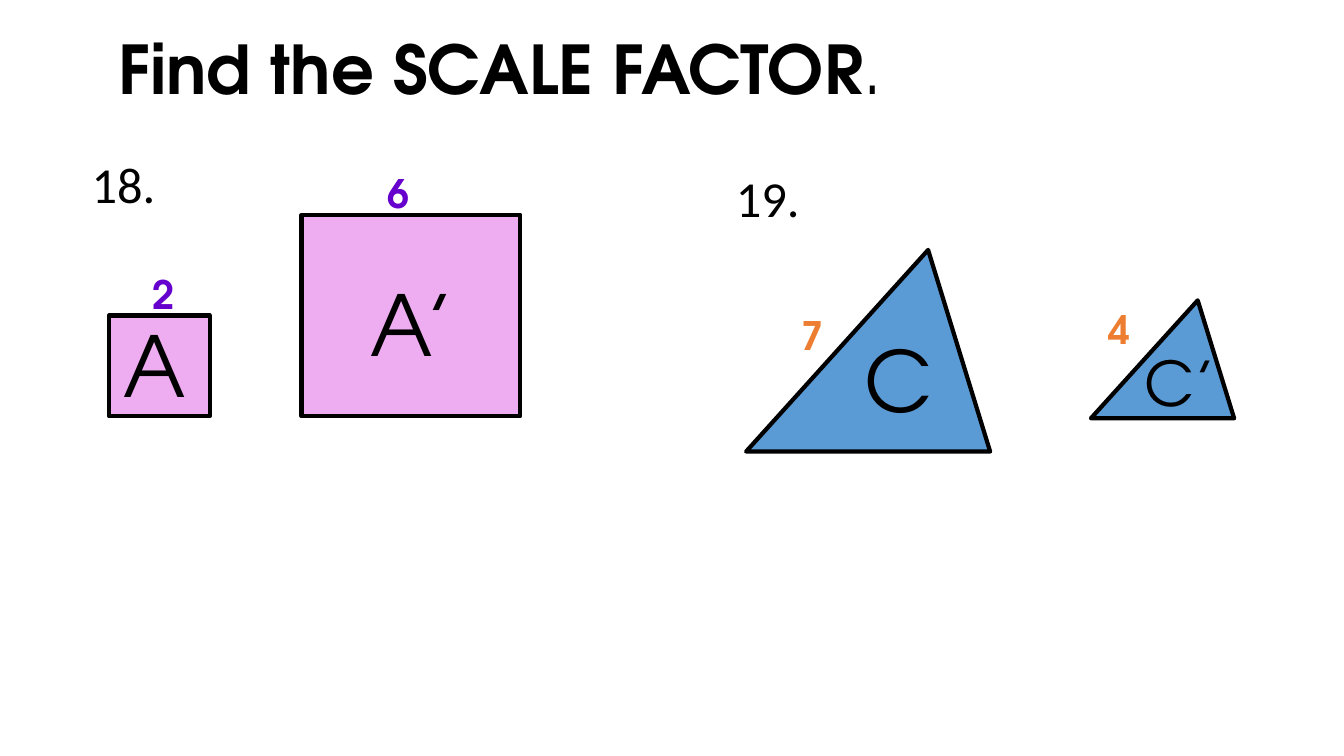
from pptx import Presentation
from pptx.dml.color import RGBColor
from pptx.enum.shapes import MSO_SHAPE as Shape
from pptx.enum.text import MSO_AUTO_SIZE as Fit, PP_ALIGN as Align
from pptx.util import Inches, Pt

BLACK = RGBColor(0x00, 0x00, 0x00)
PINK = RGBColor(0xEF, 0xAD, 0xF1)
BLUE = RGBColor(0x5B, 0x9B, 0xD5)
PURPLE = RGBColor(0x66, 0x00, 0xCC)
ORANGE = RGBColor(0xED, 0x7D, 0x31)


class Sheet:
    """Draws titles, labels and figures on one slide in a shared style."""

    face = "TeX Gyre Adventor"
    plain = "Calibri"

    def __init__(self, deck):
        self.slide = deck.slides.add_slide(deck.slide_layouts[6])
        self.spot = self.slide.shapes

    def group(self):
        self.spot = self.slide.shapes.add_group_shape().shapes

    def leave(self):
        self.spot = self.slide.shapes

    def text(self, words, box, size, color=BLACK, bold=False, face=None, wrap=True):
        frame = self.spot.add_textbox(*map(Inches, box)).text_frame
        frame.word_wrap = wrap
        frame.auto_size = Fit.SHAPE_TO_FIT_TEXT
        para = frame.paragraphs[0]
        para.add_run().text = words
        para.font.name = face or self.face
        para.font.size = Pt(size)
        para.font.bold = bold
        para.font.color.rgb = color
        return para

    def title(self, words, end, box):
        para = self.text(words, box, 48, bold=True)
        para.alignment = Align.CENTER
        stop = para.add_run()
        stop.text = end
        para.runs[0].font.bold = True
        stop.font.bold = False

    def number(self, words, left, top):
        self.text(words, (left, top, 1.07, 0.71), 36, face=self.plain, wrap=False)

    def side(self, words, left, top, color, width=0.42):
        self.text(words, (left, top, width, 0.57), 28, color, True)

    def figure(self, kind, box, fill):
        form = self.spot.add_shape(kind, *map(Inches, box))
        form.shadow.inherit = False
        form.fill.solid()
        form.fill.fore_color.rgb = fill
        form.line.color.rgb = BLACK
        form.line.width = Pt(3)
        if kind == Shape.ISOSCELES_TRIANGLE:
            form.adjustments[0] = 0.746


def main():
    deck = Presentation()
    deck.slide_width, deck.slide_height = Inches(13.33), Inches(7.5)
    sheet = Sheet(deck)
    sheet.title("Find the SCALE FACTOR", ".", (0, 0.22, 9.92, 0.91))

    sheet.group()
    for box in ((1.08, 3.13, 1, 1), (2.99, 2.13, 2.17, 2)):
        sheet.figure(Shape.RECTANGLE, box, PINK)
    sheet.side("2", 1.41, 2.63, PURPLE)
    sheet.side("6", 3.74, 1.63, PURPLE)
    sheet.text("A’", (3.58, 2.65, 1.3, 1.11), 60)
    sheet.text("A", (1.13, 3.06, 0.83, 1.1), 60)

    sheet.group()
    for box in ((10.82, 2.98, 1.42, 1.17), (7.4, 2.48, 2.42, 2)):
        sheet.figure(Shape.ISOSCELES_TRIANGLE, box, BLUE)
    sheet.side("4", 10.9, 2.98, ORANGE)
    sheet.side("7", 7.85, 3.04, ORANGE, 0.83)
    sheet.text("C’", (11.25, 3.37, 1.19, 0.84), 44)
    sheet.text("C", (8.48, 3.21, 0.83, 1.1), 60)

    sheet.leave()
    sheet.number("18.", 0.81, 1.47)
    sheet.number("19.", 7.2, 1.61)
    deck.save("out.pptx")


if __name__ == "__main__":
    main()
